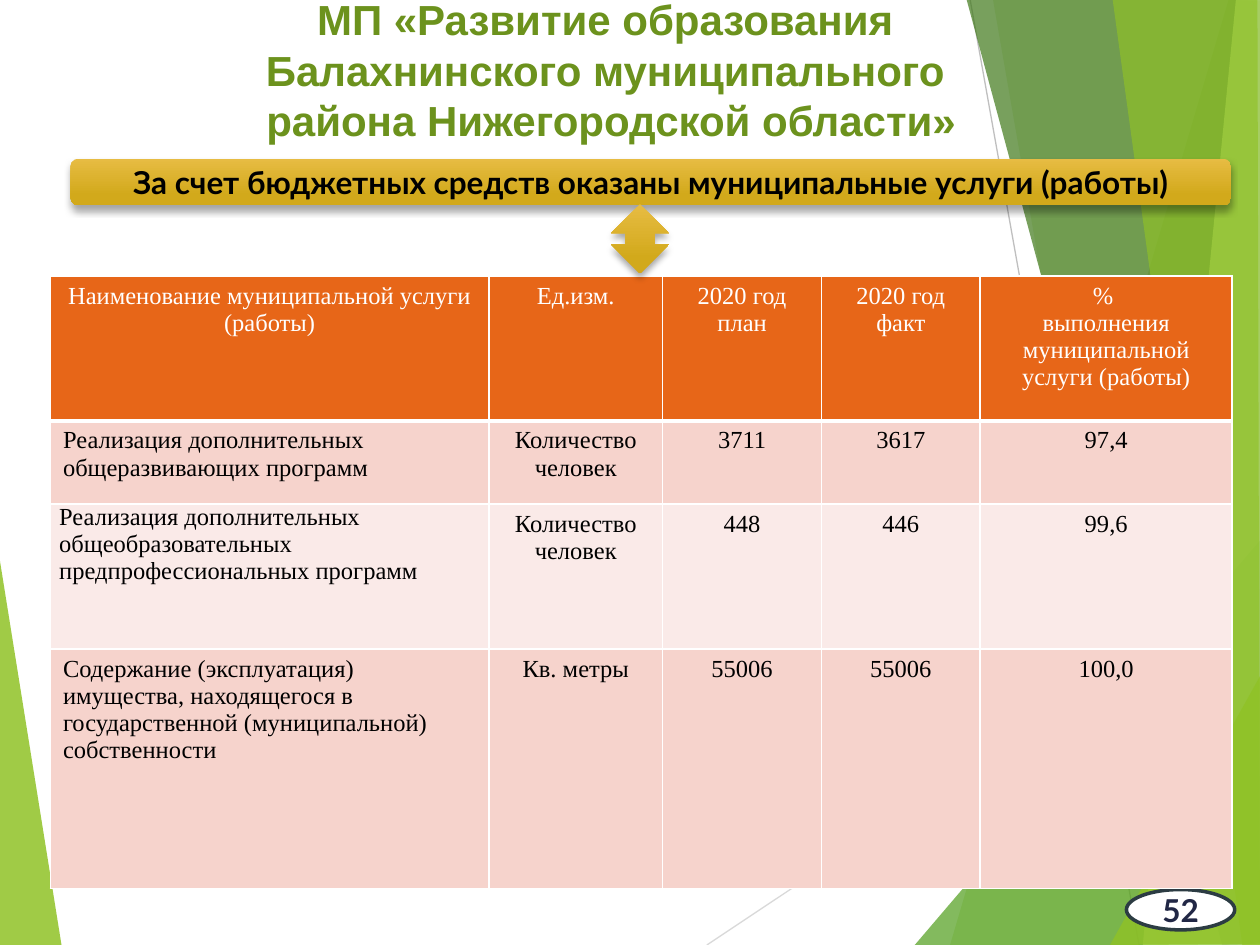
from lxml import etree
from pptx import Presentation
from pptx import util as u
from pptx.dml.color import RGBColor
from pptx.enum import shapes, text
from pptx.oxml import parse_xml
from pptx.oxml.ns import nsdecls, qn

rgb = RGBColor.from_string
WHITE, BLACK = "FFFFFF", "000000"


def write(frame, content, size=14, font="Times New Roman", color=BLACK, bold=False,
          align=text.PP_ALIGN.CENTER, anchor=text.MSO_ANCHOR.TOP, wrap=True):
    """Fill a text frame, one paragraph for each line of content."""
    frame.word_wrap = wrap
    frame.vertical_anchor = anchor
    for i, line in enumerate(content.split("\n")):
        paragraph = frame.paragraphs[0] if i == 0 else frame.add_paragraph()
        paragraph.alignment = align
        run = paragraph.add_run()
        run.text = line
        run.font.size = u.Pt(size)
        run.font.name = font
        run.font.bold = bold
        run.font.color.rgb = rgb(color)


prs = Presentation()
prs.slide_width, prs.slide_height = u.Inches(10), u.Inches(7.5)
slide = prs.slides.add_slide(prs.slide_layouts[6])

# Thin diagonal lines behind the facets
for x1, y1, x2, y2, color in [(5.61, 7.5, 10.01, 4.57, "D9D9D9"),
                              (7.7, 0, 9.04, 7.5, "BFBFBF")]:
    diagonal = slide.shapes.add_connector(
        shapes.MSO_CONNECTOR.STRAIGHT,
        u.Inches(x1), u.Inches(y1), u.Inches(x2), u.Inches(y2))
    diagonal.line.color.rgb = rgb(color)
    diagonal.line.width = u.Pt(0.75)
    etree.SubElement(diagonal.element.spPr, qn("a:effectLst"))

# Translucent green facets: corners, colour, opacity in percent
facets = [
    ([(-0.01, 4.39), (0.49, 7.51), (-0.01, 7.5)], "90C226", 85),
    ([(9.75, 0), (7.54, 7.5), (10.02, 7.51), (10.01, 0.01)], "90C226", 30),
    ([(7.88, -0.01), (9.19, 7.5), (10.01, 7.5), (10.01, -0.01)], "90C226", 20),
    ([(7.26, 7.5), (10, 4.29), (10.01, 7.5)], "54A021", 72),
    ([(7.67, -0.01), (9.7, 7.5), (10.01, 7.49), (10.01, -0.01)], "3F7819", 70),
    ([(9.81, -0.01), (9.07, 7.5), (10.01, 7.5), (10, -0.01)], "C0E474", 70),
    ([(8.83, -0.01), (9.86, 7.5), (10, 7.5), (9.98, -0.01)], "90C226", 65),
    ([(8.81, 7.5), (10.01, 5.35), (10.01, 7.49)], "90C226", 80),
]
for corners, color, opacity in facets:
    points = [(u.Inches(x), u.Inches(y)) for x, y in corners]
    outline = slide.shapes.build_freeform(*points[0])
    outline.add_line_segments(points[1:], close=True)
    facet = outline.convert_to_shape()
    facet.shadow.inherit = False
    facet.line.fill.background()
    facet.fill.solid()
    facet.fill.fore_color.rgb = rgb(color)
    tint = facet.element.spPr.find(qn("a:solidFill")).find(qn("a:srgbClr"))
    etree.SubElement(tint, qn("a:alpha"), val=str(opacity * 1000))

# Page number
page = slide.shapes.add_shape(shapes.MSO_SHAPE.OVAL, u.Inches(8.94), u.Inches(7.06),
                              u.Inches(0.86), u.Inches(0.32))
page.shadow.inherit = False
page.fill.solid()
page.fill.fore_color.rgb = rgb(WHITE)
page.line.color.rgb = rgb("2C3C43")
page.line.width = u.Pt(2)
write(page.text_frame, "52", size=18, font="Lato", color="212745", bold=True,
      anchor=text.MSO_ANCHOR.MIDDLE, wrap=False)

# Title
title = slide.shapes.add_textbox(u.Inches(0.99), u.Inches(-0.1),
                                 u.Inches(7.72), u.Inches(1.31))
write(title.text_frame,
      "МП «Развитие образования \nБалахнинского муниципального \n"
      "района Нижегородской области»",
      size=24, font="Arial", color="6C921D", bold=True)

# Services table
LEFT, CENTER = text.PP_ALIGN.LEFT, text.PP_ALIGN.CENTER
columns = [3.48, 1.38, 1.26, 1.26, 2]
heights = [1.15, 0.66, 1.15, 1.9]
row_fills = ["E76618", "F6D3CC", "FAEAE8", "F6D3CC"]
services = [
    ["Наименование муниципальной услуги (работы)", "Ед.изм.", "2020 год\nплан",
     "2020 год\nфакт", "% \nвыполнения муниципальной услуги (работы)"],
    ["Реализация дополнительных общеразвивающих программ",
     "Количество человек", "3711", "3617", "97,4"],
    ["Реализация дополнительных общеобразовательных предпрофессиональных программ",
     "Количество человек", "448", "446", "99,6"],
    ["Содержание (эксплуатация) имущества, находящегося в государственной "
     "(муниципальной) собственности", "Кв. метры", "55006", "55006", "100,0"],
]
table = slide.shapes.add_table(len(heights), len(columns), u.Inches(0.4), u.Inches(2.19),
                               u.Inches(sum(columns)), u.Inches(sum(heights))).table
for column, width in zip(table.columns, columns):
    column.width = u.Inches(width)
for r, (height, fill, row) in enumerate(zip(heights, row_fills, services)):
    table.rows[r].height = u.Inches(height)
    for c, content in enumerate(row):
        cell = table.cell(r, c)
        tight = (r, c) == (2, 0)
        cell.margin_left = cell.margin_right = u.Inches(0.07 if tight else 0.1)
        cell.margin_top = cell.margin_bottom = u.Inches(0 if tight else 0.05)
        write(cell.text_frame, content, color=WHITE if r == 0 else BLACK,
              align=LEFT if r and c == 0 else CENTER)
        properties = cell._tc.get_or_add_tcPr()
        for side in "LRTB":
            width = 3 if r == 0 and side == "B" else 1
            properties.append(parse_xml(
                f'<a:ln{side} {nsdecls("a")} w="{u.Pt(width)}"><a:solidFill>'
                f'<a:srgbClr val="{WHITE}"/></a:solidFill></a:ln{side}>'))
        cell.fill.solid()
        cell.fill.fore_color.rgb = rgb(fill)

# Golden banner and the arrow linking it to the table
gold = []
for kind, x, y, w, h in [(shapes.MSO_SHAPE.ROUNDED_RECTANGLE, 0.56, 1.26, 9.21, 0.37),
                         (shapes.MSO_SHAPE.UP_DOWN_ARROW, 4.85, 1.62, 0.46, 0.55)]:
    part = slide.shapes.add_shape(kind, u.Inches(x), u.Inches(y), u.Inches(w), u.Inches(h))
    part.line.fill.background()
    part.fill.gradient()
    part.fill.gradient_angle = 270
    for stop, color, position in zip(part.fill.gradient_stops, ["E7BC43", "D2A91B"], [0, 0.78]):
        stop.color.rgb = rgb(color)
        stop.position = position
    part.element.spPr.append(parse_xml(
        f'<a:effectLst {nsdecls("a")}><a:outerShdw blurRad="{u.Pt(4)}" dist="{u.Pt(3)}" '
        f'dir="5400000" rotWithShape="0"><a:srgbClr val="{BLACK}"><a:alpha val="35000"/>'
        '</a:srgbClr></a:outerShdw></a:effectLst>'))
    gold.append(part)
write(gold[0].text_frame, "За счет бюджетных средств оказаны муниципальные услуги (работы)",
      size=18, font="Lato", bold=True, anchor=text.MSO_ANCHOR.MIDDLE)

prs.save("out.pptx")
